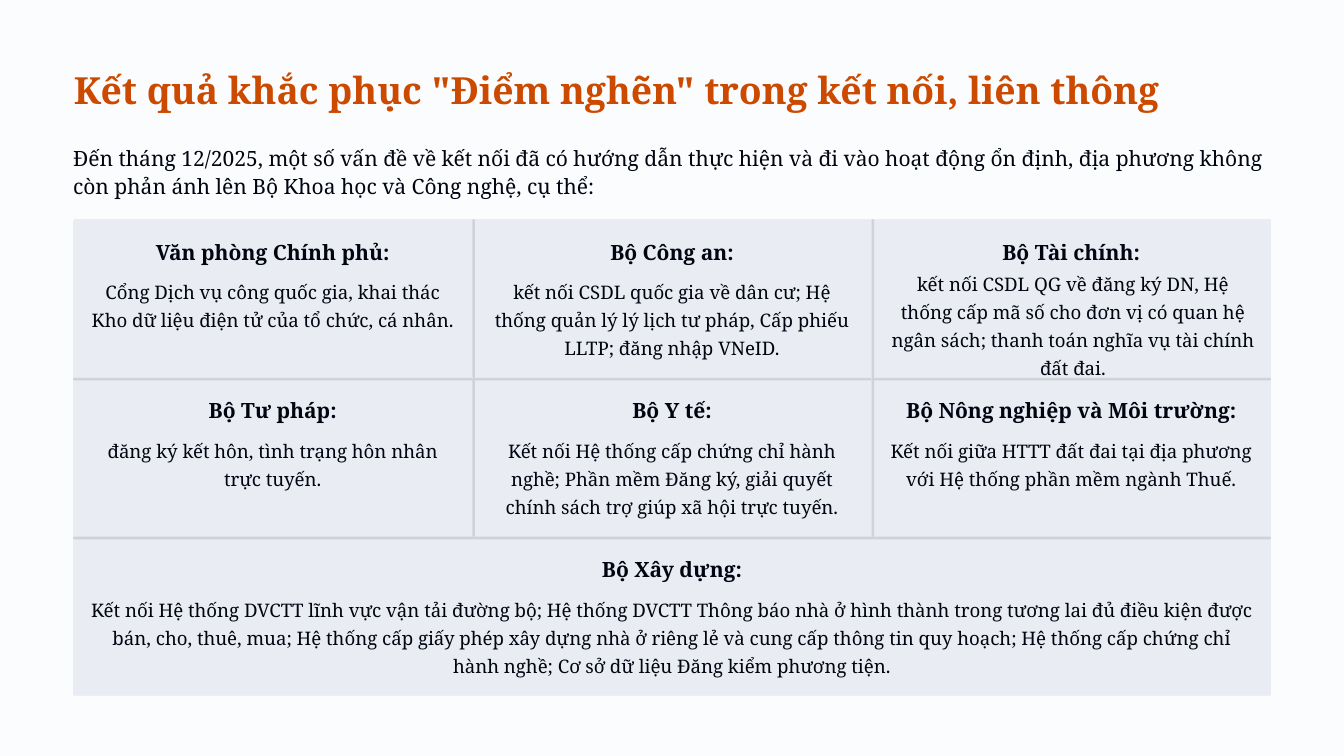
"""Build the slide on resolved bottlenecks in data connection between ministries."""
from pptx import Presentation
from pptx.dml.color import RGBColor
from pptx.enum.shapes import MSO_SHAPE
from pptx.enum.text import MSO_ANCHOR, PP_ALIGN
from pptx.util import Inches, Pt

INK, ACCENT, PANEL, RULE = "010511", "CC4900", "E9ECF2", "CFD2D8"
LEFT, TOP, WIDTH = 0.87, 2.61, 14.26
COL, ROW, LINE, PAD = WIDTH / 3, 1.89, 0.03, 0.21

prs = Presentation()
prs.slide_width, prs.slide_height = Inches(16), Inches(9)
s = prs.slides.add_slide(prs.slide_layouts[6])
s.background.fill.solid()
s.background.fill.fore_color.rgb = RGBColor.from_string("FBFCFE")


def add_box(x, y, w, h, color, radius=None):
    kind = MSO_SHAPE.RECTANGLE if radius is None else MSO_SHAPE.ROUNDED_RECTANGLE
    sp = s.shapes.add_shape(kind, Inches(x), Inches(y), Inches(w), Inches(h))
    if radius is not None:
        sp.adjustments[0] = radius
    sp.shadow.inherit = False
    sp.fill.solid()
    sp.fill.fore_color.rgb = RGBColor.from_string(color)
    sp.line.fill.background()


def add_text(text, x, y, w, h, size=16, color=INK, bold=False,
             align=PP_ALIGN.CENTER, spacing=24):
    tf = s.shapes.add_textbox(Inches(x), Inches(y), Inches(w), Inches(h)).text_frame
    tf.margin_left = tf.margin_right = tf.margin_top = tf.margin_bottom = 0
    tf.word_wrap = True
    tf.vertical_anchor = MSO_ANCHOR.TOP
    p = tf.paragraphs[0]
    p.alignment = align
    p.line_spacing = Pt(spacing)
    r = p.add_run()
    r.text = text
    r.font.name, r.font.size, r.font.bold = "Noto Serif", Pt(size), bold
    r.font.color.rgb = RGBColor.from_string(color)


add_text('Kết quả khắc phục "Điểm nghẽn" trong kết nối, liên thông',
         0.88, 0.68, 14.15, 0.61, size=32, color=ACCENT, bold=True,
         align=PP_ALIGN.LEFT, spacing=47)
add_text("Đến tháng 12/2025, một số vấn đề về kết nối đã có hướng dẫn thực hiện và đi vào "
         "hoạt động ổn định, địa phương không còn phản ánh lên Bộ Khoa học và Công nghệ, cụ thể:",
         LEFT, 1.7, WIDTH, 0.67, size=18, align=PP_ALIGN.LEFT)

add_box(LEFT, TOP, WIDTH, 3 * ROW, PANEL, 0.006)

cells = [
    (0, 0, 1, 0.67, "Văn phòng Chính phủ:",
     "Cổng Dịch vụ công quốc gia, khai thác Kho dữ liệu điện tử của tổ chức, cá nhân."),
    (0, 1, 1, 1.01, "Bộ Công an:",
     "kết nối CSDL quốc gia về dân cư; Hệ thống quản lý lý lịch tư pháp, Cấp phiếu LLTP; "
     "đăng nhập VNeID."),
    (0, 2, 1, 1.01, "Bộ Tài chính:",
     "kết nối CSDL QG về đăng ký DN, Hệ thống cấp mã số cho đơn vị có quan hệ ngân sách; "
     "thanh toán nghĩa vụ tài chính đất đai."),
    (1, 0, 1, 0.67, "Bộ Tư pháp:",
     "đăng ký kết hôn, tình trạng hôn nhân trực tuyến."),
    (1, 1, 1, 1.01, "Bộ Y tế:",
     "Kết nối Hệ thống cấp chứng chỉ hành nghề; Phần mềm Đăng ký, giải quyết chính sách "
     "trợ giúp xã hội trực tuyến."),
    (1, 2, 1, 0.67, "Bộ Nông nghiệp và Môi trường:",
     "Kết nối giữa HTTT đất đai tại địa phương với Hệ thống phần mềm ngành Thuế."),
    (2, 0, 3, 1.01, "Bộ Xây dựng:",
     "Kết nối Hệ thống DVCTT lĩnh vực vận tải đường bộ; Hệ thống DVCTT Thông báo nhà ở "
     "hình thành trong tương lai đủ điều kiện được bán, cho, thuê, mua; Hệ thống cấp giấy "
     "phép xây dựng nhà ở riêng lẻ và cung cấp thông tin quy hoạch; Hệ thống cấp chứng chỉ "
     "hành nghề; Cơ sở dữ liệu Đăng kiểm phương tiện."),
]
for row, col, span, body_h, head, body in cells:
    x, y, w = LEFT + col * COL, TOP + row * ROW, span * COL
    add_box(x, y, w, ROW, PANEL, 0.017 if row == col == 0 else None)
    if col:
        add_box(x, y, LINE, ROW, RULE, 0.5)
    if row:
        add_box(x, y, w, LINE, RULE, 0.5)
    add_text(head, x + PAD, y + PAD, w - 2 * PAD, 0.33, size=18, bold=True, spacing=23.5)
    dx, dy = (0.02, -0.1) if head == "Bộ Tài chính:" else (0, 0)
    add_text(body, x + PAD + dx, y + 0.67 + dy, w - 2 * PAD, body_h)

prs.save("out.pptx")
